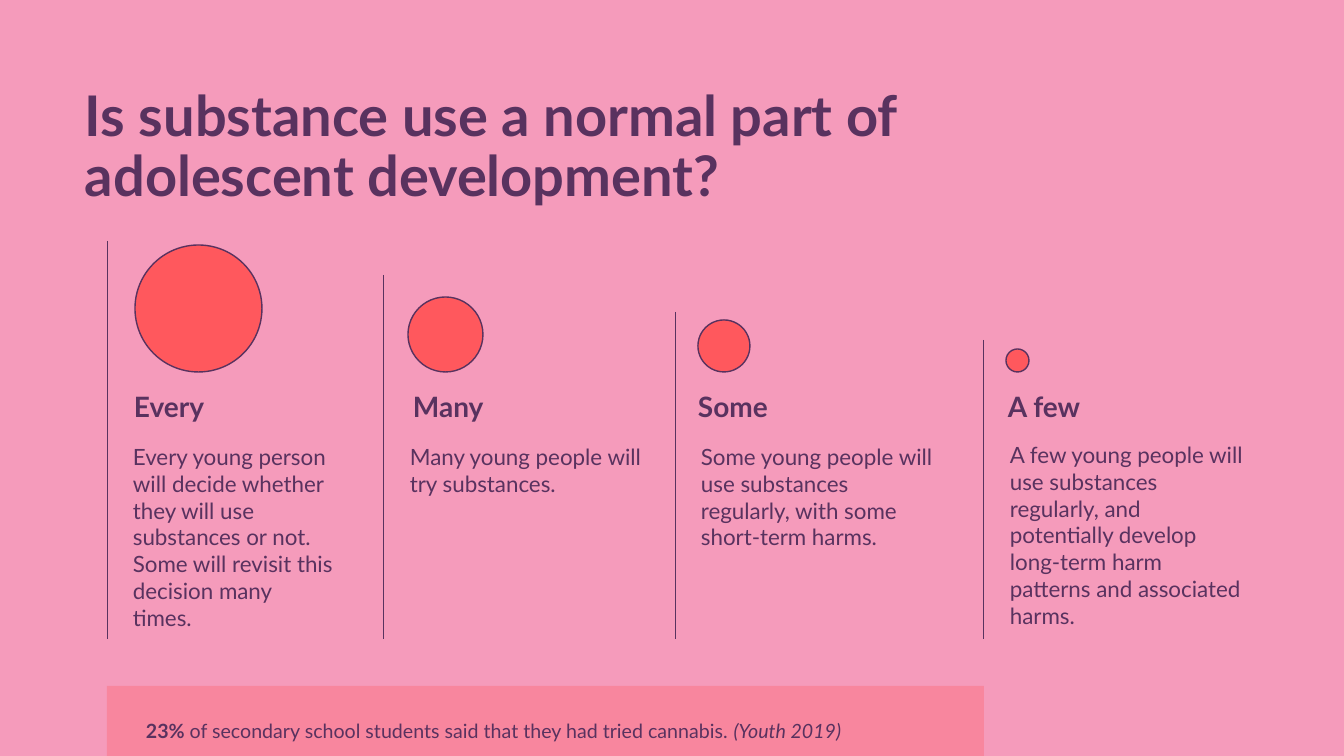
from dataclasses import dataclass

from lxml.etree import SubElement
from pptx import Presentation
from pptx.dml.color import RGBColor
from pptx.enum.shapes import MSO_CONNECTOR, MSO_SHAPE
from pptx.oxml.ns import qn
from pptx.slide import Slide
from pptx.util import Pt

EMU_PER_PX = 914400 / 100.8


def px(n):
    return round(n * EMU_PER_PX)


def color(hex_string):
    return RGBColor.from_string(hex_string)


@dataclass
class Deck:
    slide: Slide
    font: str = "Lato"
    ink: str = "59325F"
    accent: str = "FF585D"
    pink: str = "F59BBB"

    def background(self):
        fill = self.slide.background.fill
        fill.solid()
        fill.fore_color.rgb = color(self.pink)

    def text(self, x, y, w, h, runs, size, bold=None, spacing=None):
        """Add one paragraph; runs is a list of (text, bold, italic)."""
        box = self.slide.shapes.add_textbox(px(x), px(y), px(w), px(h))
        tf = box.text_frame
        tf.word_wrap = True
        p = tf.paragraphs[0]
        p.line_spacing = spacing
        p.font.name, p.font.size, p.font.bold = self.font, Pt(size), bold
        p.font.color.rgb = color(self.ink)
        for words, run_bold, italic in runs:
            r = p.add_run()
            r.text = words
            r.font.bold, r.font.italic = run_bold, italic

    def plain(self, x, y, w, h, words, size, bold=None, spacing=None):
        self.text(x, y, w, h, [(words, None, None)], size, bold, spacing)

    def shape(self, kind, x, y, w, h):
        sp = self.slide.shapes.add_shape(kind, px(x), px(y), px(w), px(h))
        sp.shadow.inherit = False
        sp.fill.solid()
        sp.fill.fore_color.rgb = color(self.accent)
        return sp

    def circle(self, x, bottom, diameter):
        sp = self.shape(MSO_SHAPE.OVAL, x, bottom - diameter, diameter, diameter)
        sp.line.color.rgb = color(self.ink)
        sp.line.width = Pt(1)

    def panel(self, x, y, w, h, opacity):
        """Add a borderless rectangle; opacity is a percentage."""
        sp = self.shape(MSO_SHAPE.RECTANGLE, x, y, w, h)
        sp.line.fill.background()
        rgb = sp.fill._xPr.find(".//" + qn("a:srgbClr"))
        SubElement(rgb, qn("a:alpha"), val=str(opacity * 1000))

    def rule(self, x, top, bottom):
        line = self.slide.shapes.add_connector(
            MSO_CONNECTOR.STRAIGHT, px(x), px(top), px(x), px(bottom))
        line.line.color.rgb = color(self.ink)
        line.line.width = Pt(0.5)
        SubElement(line._element.spPr, qn("a:effectLst"))


# heading, heading x, rule x, rule top, circle x, diameter, body box, body
COLUMNS = [
    ("Every", 124, 107, 241, 135, 127, (123, 438, 221, 223),
     "Every young person will decide whether they will use substances or not. "
     "Some will revisit this decision many times."),
    ("Many", 403, 383, 275, 408, 75, (400, 438, 253, 116),
     "Many young people will try substances."),
    ("Some", 688, 675, 312, 698, 52, (691, 438, 253, 116),
     "Some young people will use substances regularly, "
     "with some short-term harms."),
    ("A few", 998, 983, 340, 1006, 23, (1000, 436, 253, 186),
     "A few young people will use substances regularly, and potentially "
     "develop long-term harm patterns and associated harms."),
]


def main():
    prs = Presentation()
    prs.slide_width, prs.slide_height = px(1344), px(756)
    deck = Deck(prs.slides.add_slide(prs.slide_layouts[6]))
    deck.background()
    deck.plain(75, 83, 999, 157,
               "Is substance use a normal part of adolescent development?",
               40, bold=True, spacing=0.9)

    deck.panel(107, 686, 877, 70, opacity=30)
    deck.text(136, 714, 807, 34, [
        ("23% ", True, None),
        ("of secondary school students said that they had tried cannabis. ",
         None, None),
        ("(Youth 2019)", None, True),
    ], 14)

    for heading, head_x, rule_x, top, circle_x, diameter, box, body in COLUMNS:
        deck.rule(rule_x, top, 639)
        deck.circle(circle_x, 372, diameter)
        deck.plain(head_x, 385, 129, 44, heading, 20, bold=True)
        deck.plain(*box, body, 16)

    prs.save("out.pptx")


if __name__ == "__main__":
    main()
